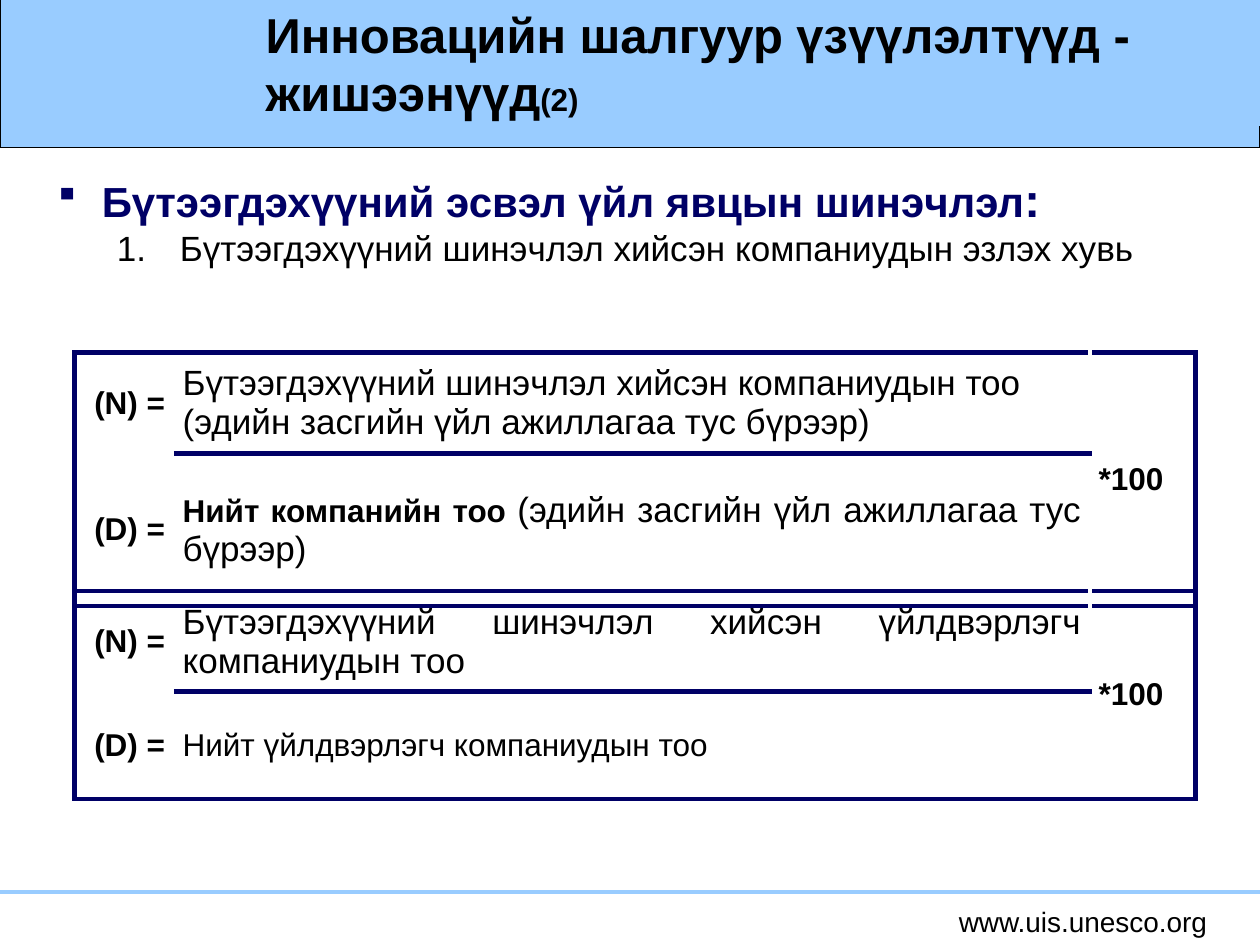
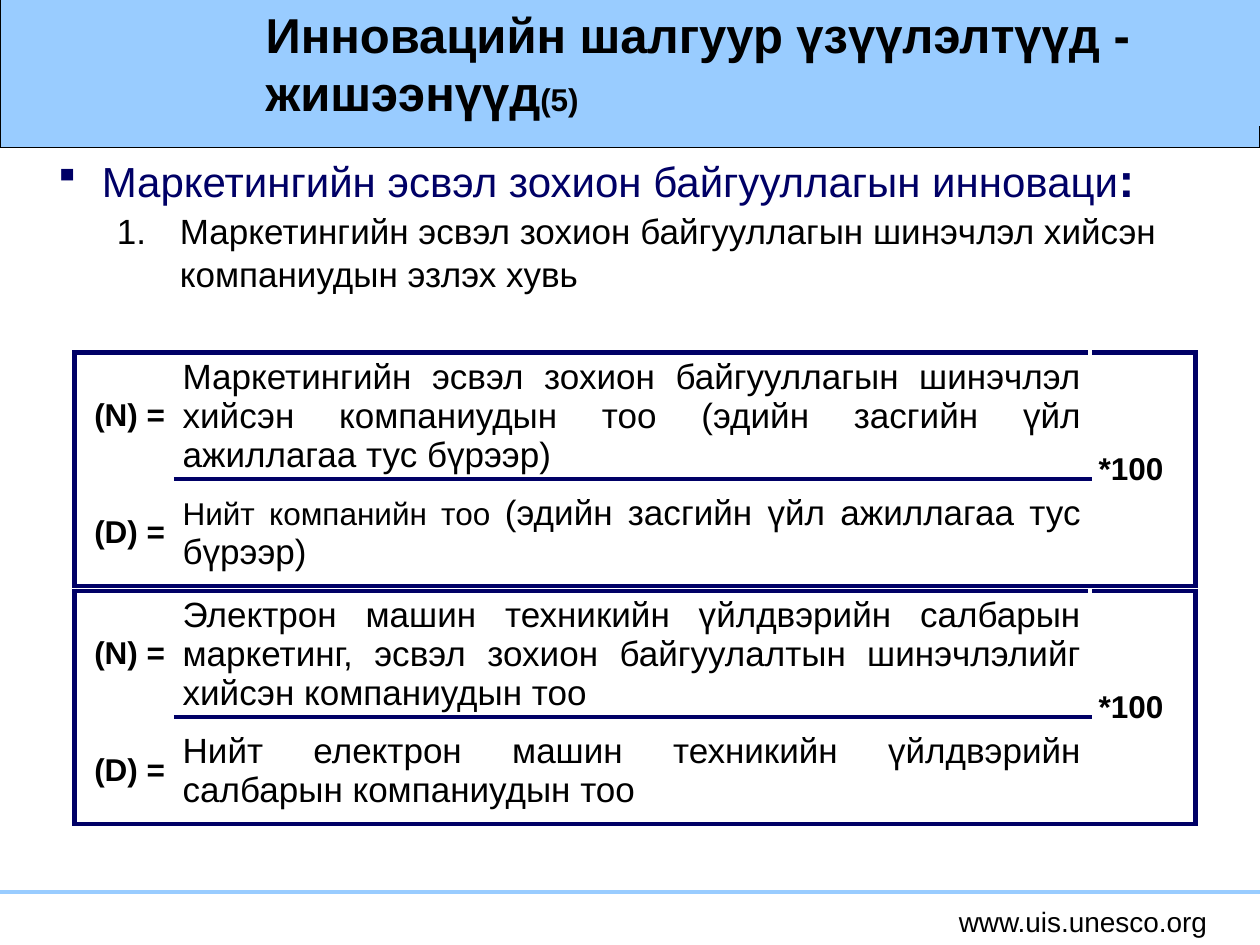
from dataclasses import dataclass

from pptx import Presentation
from pptx import util as u
from pptx.dml.color import RGBColor
from pptx.enum import shapes, text
from pptx.oxml import ns, xmlchemy

# The slide is a grid of square cells, 100 columns by 75 rows.
COLUMNS, ROWS = 100, 75
CELL = u.Inches(0.1)


@dataclass(frozen=True)
class Theme:
    font: str = "Arial"
    band: str = "99CCFF"
    navy: str = "000066"
    ink: str = "000000"
    paper: str = "FFFFFF"
    title: int = 28
    colon: int = 27
    heading: int = 24
    body: int = 20
    small: int = 18
    footer: int = 16
    rule: float = 3


@dataclass(frozen=True)
class Box:
    left: float
    top: float
    width: float
    height: float

    def inside(self, left, top, width, height):
        return Box(self.left + left, self.top + top, width, height)

    def lengths(self):
        return [grid(n) for n in (self.left, self.top, self.width, self.height)]


THEME = Theme()
PAGE = Box(0, 0, COLUMNS, ROWS)
FRACTION_COLUMNS = (7.9, 72.7, 8.4)
DENOMINATOR_ROW = 8.5
BORDER_TAGS = ("a:lnL", "a:lnR", "a:lnT", "a:lnB")


def grid(count):
    return u.Emu(round(count * CELL))


def rgb(code):
    return RGBColor.from_string(code)


def add_xml(parent, tag, **attributes):
    child = xmlchemy.OxmlElement(tag)
    for name, value in attributes.items():
        child.set(name, str(value))
    parent.append(child)
    return child


def add_span(para, words, size, bold=False, color=THEME.ink):
    span = para.add_run()
    span.text = words
    span.font.name = THEME.font
    span.font.size = u.Pt(size)
    span.font.bold = bold
    span.font.color.rgb = rgb(color)


def add_panel(page, box, line=None):
    """Draw a band-coloured rectangle, outlined if a line colour is given."""
    panel = page.shapes.add_shape(shapes.MSO_SHAPE.RECTANGLE, *box.lengths())
    panel.shadow.inherit = False
    panel.fill.solid()
    panel.fill.fore_color.rgb = rgb(THEME.band)
    if line:
        panel.line.color.rgb = rgb(line)
        panel.line.width = u.Pt(0.75)
    else:
        panel.line.fill.background()
    return panel


def add_header(page, box, number):
    add_panel(page, box.inside(0, -0.8, box.width, box.height + 0.8), THEME.ink)
    title = add_panel(page, box.inside(20.1, 0, box.width - 20.1, 10))
    frame = title.text_frame
    frame.word_wrap = True
    frame.vertical_anchor = text.MSO_ANCHOR.MIDDLE
    para = frame.paragraphs[0]
    para.alignment = text.PP_ALIGN.LEFT
    add_span(para, "Инновацийн шалгуур үзүүлэлтүүд - жишээнүүд", THEME.title, True)
    add_span(para, f"({number})", THEME.small, True)


def add_footer(page, box):
    left, top, width, _ = box.lengths()
    rule = page.shapes.add_connector(
        shapes.MSO_CONNECTOR.STRAIGHT, left, top, left + width, top)
    rule.line.color.rgb = rgb(THEME.band)
    rule.line.width = u.Pt(2.25)
    add_xml(rule._element.spPr, "a:effectLst")
    address = page.shapes.add_textbox(*box.inside(75, 0.5, 21.9, 3.7).lengths())
    address.text_frame.word_wrap = False
    para = address.text_frame.paragraphs[0]
    para.alignment = text.PP_ALIGN.CENTER
    add_span(para, "www.uis.unesco.org", THEME.footer)


def indent(para, margin, hanging):
    properties = para._p.get_or_add_pPr()
    properties.set("marL", str(grid(margin)))
    properties.set("indent", str(-grid(hanging)))
    return properties


def add_outline(page, box, heading, item, bold, spacing):
    """Write the bulleted heading and the numbered indicator under it."""
    frame = page.shapes.add_textbox(*box.lengths()).text_frame
    frame.word_wrap = True
    para = frame.paragraphs[0]
    properties = indent(para, 3.8, 3.8)
    add_xml(add_xml(properties, "a:buClr"), "a:srgbClr", val=THEME.navy)
    add_xml(properties, "a:buSzPct", val=85000)
    add_xml(properties, "a:buChar", char="▪")
    add_span(para, heading, THEME.heading, bold, THEME.navy)
    add_span(para, ":", THEME.colon, True, THEME.navy)

    entry = frame.add_paragraph()
    add_xml(indent(entry, 10, 5), "a:buAutoNum", type="arabicPeriod")
    add_span(entry, item, THEME.body)
    for para in frame.paragraphs:
        para.line_spacing = spacing


def set_borders(cell, left=None, right=None, top=None, bottom=None):
    properties = cell._tc.get_or_add_tcPr()
    for place, (tag, color) in enumerate(zip(BORDER_TAGS, (left, right, top, bottom))):
        line = xmlchemy.OxmlElement(tag)
        line.set("w", str(u.Pt(THEME.rule)))
        if color:
            add_xml(add_xml(line, "a:solidFill"), "a:srgbClr", val=color)
        else:
            add_xml(line, "a:noFill")
        properties.insert(place, line)


def fill_cell(cell, paragraphs, align):
    cell.fill.background()
    cell.margin_left = cell.margin_right = u.Inches(0.07)
    cell.margin_top = cell.margin_bottom = 0
    cell.vertical_anchor = text.MSO_ANCHOR.MIDDLE
    frame = cell.text_frame
    for number, spans in enumerate(paragraphs):
        para = frame.add_paragraph() if number else frame.paragraphs[0]
        para.alignment = align
        for span in spans:
            add_span(para, *span)


def add_fraction(page, box, numerator, denominator):
    """Draw numerator over denominator, times 100, in a navy frame."""
    table = page.shapes.add_table(2, 3, *box.lengths()).table
    table.first_row = table.horz_banding = False
    for column, width in zip(table.columns, FRACTION_COLUMNS):
        column.width = grid(width)
    table.rows[0].height = grid(box.height - denominator[0])
    table.rows[1].height = grid(denominator[0])
    table.cell(0, 2).merge(table.cell(1, 2))

    navy, paper = THEME.navy, THEME.paper
    labels = (("(N) =", numerator), ("(D) =", denominator[1]))
    for row, (label, paragraphs) in enumerate(labels):
        outer = {"bottom" if row else "top": navy}
        name, phrase, factor = (table.cell(row, column) for column in range(3))
        fill_cell(name, [[(label, THEME.small, True)]], text.PP_ALIGN.RIGHT)
        fill_cell(phrase, paragraphs, text.PP_ALIGN.JUSTIFY)
        set_borders(name, left=navy, **outer)
        set_borders(phrase, right=paper, top=navy, bottom=navy)
        set_borders(factor, left=paper, right=navy, top=navy, bottom=navy)
    fill_cell(table.cell(0, 2), [[("*100", THEME.small, True)]], text.PP_ALIGN.LEFT)


def add_indicator_page(deck, number, outline, fractions):
    page = deck.slides.add_slide(deck.slide_layouts[6])
    add_header(page, PAGE.inside(0, 0, COLUMNS, 11.7), number)
    add_footer(page, PAGE.inside(0, 70.8, COLUMNS, 4.2))
    drop, heading, item, bold, spacing = outline
    add_outline(page, PAGE.inside(3.3, 12.5 + drop, 93.3, 14), heading, item, bold, spacing)
    for place, (upper, numerator, lower, denominator) in enumerate(fractions):
        box = PAGE.inside(5.9, 28 + 18.9 * place, sum(FRACTION_COLUMNS), upper + lower)
        add_fraction(page, box, numerator, (lower, denominator))


def main():
    deck = Presentation()
    deck.slide_width, deck.slide_height = grid(COLUMNS), grid(ROWS)
    body, small = THEME.body, THEME.small
    by_activity = ("(эдийн засгийн үйл ажиллагаа тус бүрээр)", body)

    add_indicator_page(
        deck, 2,
        (0.5, "Бүтээгдэхүүний эсвэл үйл явцын шинэчлэл",
         "Бүтээгдэхүүний шинэчлэл хийсэн компаниудын эзлэх хувь", True, 1.0),
        [(8, [[("Бүтээгдэхүүний шинэчлэл хийсэн компаниудын тоо", body)], [by_activity]],
          12.1, [[("Нийт компанийн тоо ", small, True), by_activity]]),
         (8, [[("Бүтээгдэхүүний шинэчлэл хийсэн үйлдвэрлэгч компаниудын тоо", body)]],
          DENOMINATOR_ROW, [[("Нийт үйлдвэрлэгч компаниудын тоо", small)]])])

    add_indicator_page(
        deck, 5,
        (0, "Маркетингийн эсвэл зохион байгууллагын инноваци",
         "Маркетингийн эсвэл зохион байгууллагын шинэчлэл хийсэн компаниудын эзлэх хувь",
         False, u.Pt(25)),
        [(9.3, [[("Маркетингийн эсвэл зохион байгууллагын шинэчлэл хийсэн "
                  "компаниудын тоо ", body), by_activity]],
          DENOMINATOR_ROW, [[("Нийт компанийн тоо ", small), by_activity]]),
         (9.3, [[("Электрон машин техникийн үйлдвэрийн салбарын маркетинг, эсвэл зохион "
                  "байгуулалтын шинэчлэлийг хийсэн компаниудын тоо", body)]],
          DENOMINATOR_ROW, [[("Нийт електрон машин техникийн үйлдвэрийн салбарын "
                              "компаниудын тоо", body)]])])
    deck.save("out.pptx")


if __name__ == "__main__":
    main()
